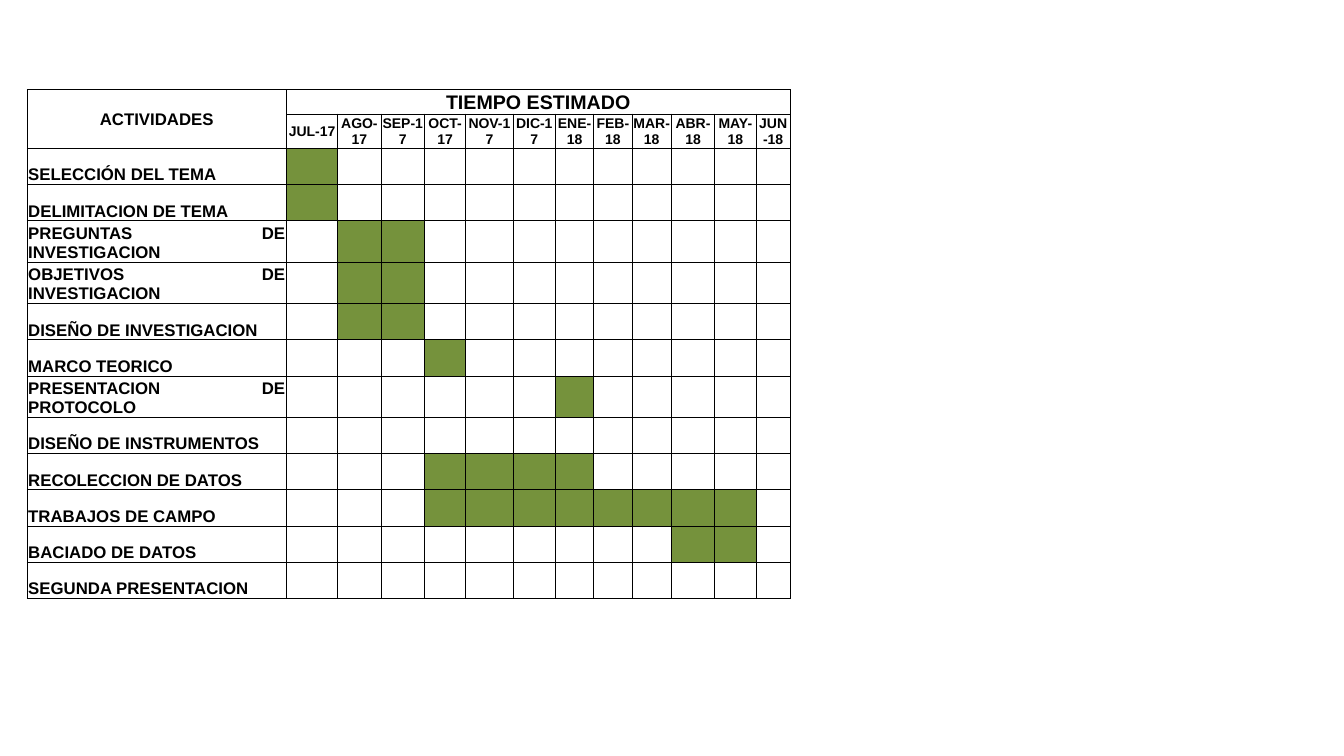
from lxml import etree
from pptx import Presentation, util as u
from pptx.dml.color import RGBColor
from pptx.enum import text
from pptx.oxml import ns

HEADING, TIMELINE = "ACTIVIDADES", "TIEMPO ESTIMADO"
MONTHS = [
    ("JUL-17", 0.51), ("AGO-17", 0.43), ("SEP-17", 0.43), ("OCT-17", 0.41),
    ("NOV-17", 0.47), ("DIC-17", 0.42), ("ENE-18", 0.38), ("FEB-18", 0.38),
    ("MAR-18", 0.39), ("ABR-18", 0.43), ("MAY-18", 0.41), ("JUN-18", 0.34),
]
ACTIVITIES = [
    ("SELECCIÓN DEL TEMA", "JUL-17", "JUL-17"),
    ("DELIMITACION DE TEMA", "JUL-17", "JUL-17"),
    ("PREGUNTAS DE INVESTIGACION", "AGO-17", "SEP-17"),
    ("OBJETIVOS DE INVESTIGACION", "AGO-17", "SEP-17"),
    ("DISEÑO DE INVESTIGACION", "AGO-17", "SEP-17"),
    ("MARCO TEORICO", "OCT-17", "OCT-17"),
    ("PRESENTACION DE PROTOCOLO", "ENE-18", "ENE-18"),
    ("DISEÑO DE INSTRUMENTOS", None, None),
    ("RECOLECCION DE DATOS", "OCT-17", "ENE-18"),
    ("TRABAJOS DE CAMPO", "OCT-17", "MAY-18"),
    ("BACIADO DE DATOS", "ABR-18", "MAY-18"),
    ("SEGUNDA PRESENTACION", None, None),
]
GREEN, WHITE, BLACK = "75923C", "FFFFFF", "000000"
ACTIVITY_WIDTH, TITLE_HEIGHT, MONTH_HEIGHT = 2.57, 0.24, 0.34
ONE_LINE, TWO_LINES, LONGEST_LINE = 0.36, 0.41, 23
LEFT, TOP = 0.27, 0.89
MIDDLE, BOTTOM = text.MSO_ANCHOR.MIDDLE, text.MSO_ANCHOR.BOTTOM
CENTER, JUSTIFY = text.PP_ALIGN.CENTER, text.PP_ALIGN.JUSTIFY


def color(value):
    """Turn a hex string into a colour."""
    return RGBColor.from_string(value)


def frame(cell, background):
    """Give a cell thin margins, black borders and a background."""
    cell.margin_left = cell.margin_right = cell.margin_top = u.Inches(0.01)
    cell.margin_bottom = 0
    properties = cell._tc.get_or_add_tcPr()
    for side in ("a:lnL", "a:lnR", "a:lnT", "a:lnB"):
        border = etree.SubElement(properties, ns.qn(side), w=str(u.Pt(0.5)))
        paint = etree.SubElement(border, ns.qn("a:solidFill"))
        etree.SubElement(paint, ns.qn("a:srgbClr"), val=BLACK)
    cell.fill.solid()
    cell.fill.fore_color.rgb = color(background)


def write(cell, words, size, anchor, alignment):
    """Write bold black words in a cell."""
    cell.vertical_anchor = anchor
    paragraph = cell.text_frame.paragraphs[0]
    paragraph.alignment = alignment
    run = paragraph.add_run()
    run.text = words
    run.font.name, run.font.size, run.font.bold = "Arial", u.Pt(size), True
    run.font.color.rgb = color(BLACK)


def main():
    """Build the schedule slide."""
    deck = Presentation()
    deck.slide_width, deck.slide_height = u.Inches(13.33), u.Inches(7.5)
    slide = deck.slides.add_slide(deck.slide_layouts[6])
    months = [month for month, _ in MONTHS]
    widths = [ACTIVITY_WIDTH] + [width for _, width in MONTHS]
    heights = [TITLE_HEIGHT, MONTH_HEIGHT] + [
        TWO_LINES if len(activity) > LONGEST_LINE else ONE_LINE
        for activity, _, _ in ACTIVITIES
    ]
    schedule = slide.shapes.add_table(
        len(heights), len(widths), u.Inches(LEFT), u.Inches(TOP),
        u.Inches(sum(widths)), u.Inches(sum(heights)),
    ).table
    schedule.first_row = schedule.horz_banding = False
    for column, width in zip(schedule.columns, widths):
        column.width = u.Inches(width)
    for row, height in zip(schedule.rows, heights):
        row.height = u.Inches(height)

    busy = {
        (row, column)
        for row, (_, start, end) in enumerate(ACTIVITIES, 2) if start
        for column in range(months.index(start) + 1, months.index(end) + 2)
    }
    for row in range(len(heights)):
        for column in range(len(widths)):
            frame(schedule.cell(row, column), GREEN if (row, column) in busy else WHITE)

    schedule.cell(0, 0).merge(schedule.cell(1, 0))
    schedule.cell(0, 1).merge(schedule.cell(0, len(months)))
    write(schedule.cell(0, 0), HEADING, 12, MIDDLE, CENTER)
    write(schedule.cell(0, 1), TIMELINE, 14, BOTTOM, CENTER)
    for column, month in enumerate(months, 1):
        write(schedule.cell(1, column), month, 10, MIDDLE, CENTER)
    for row, (activity, _, _) in enumerate(ACTIVITIES, 2):
        write(schedule.cell(row, 0), activity, 12, BOTTOM, JUSTIFY)
    deck.save("out.pptx")


if __name__ == "__main__":
    main()
